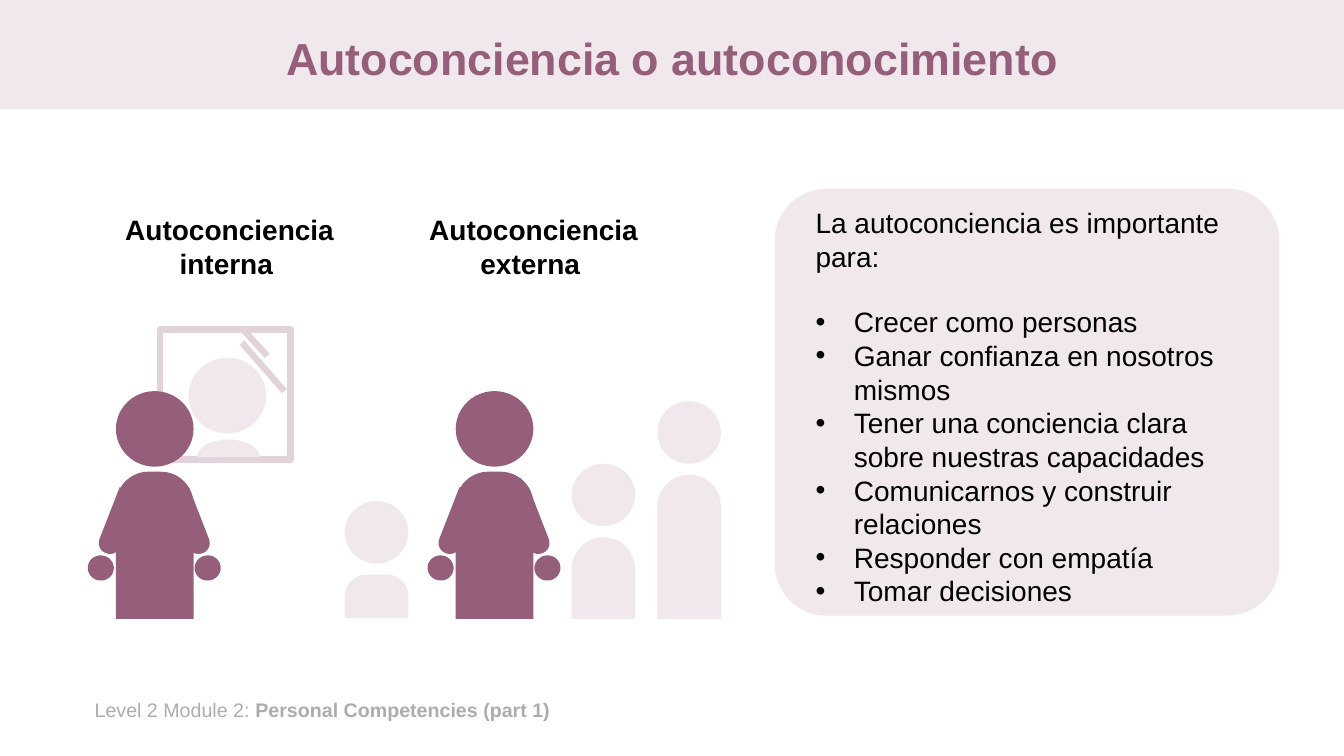
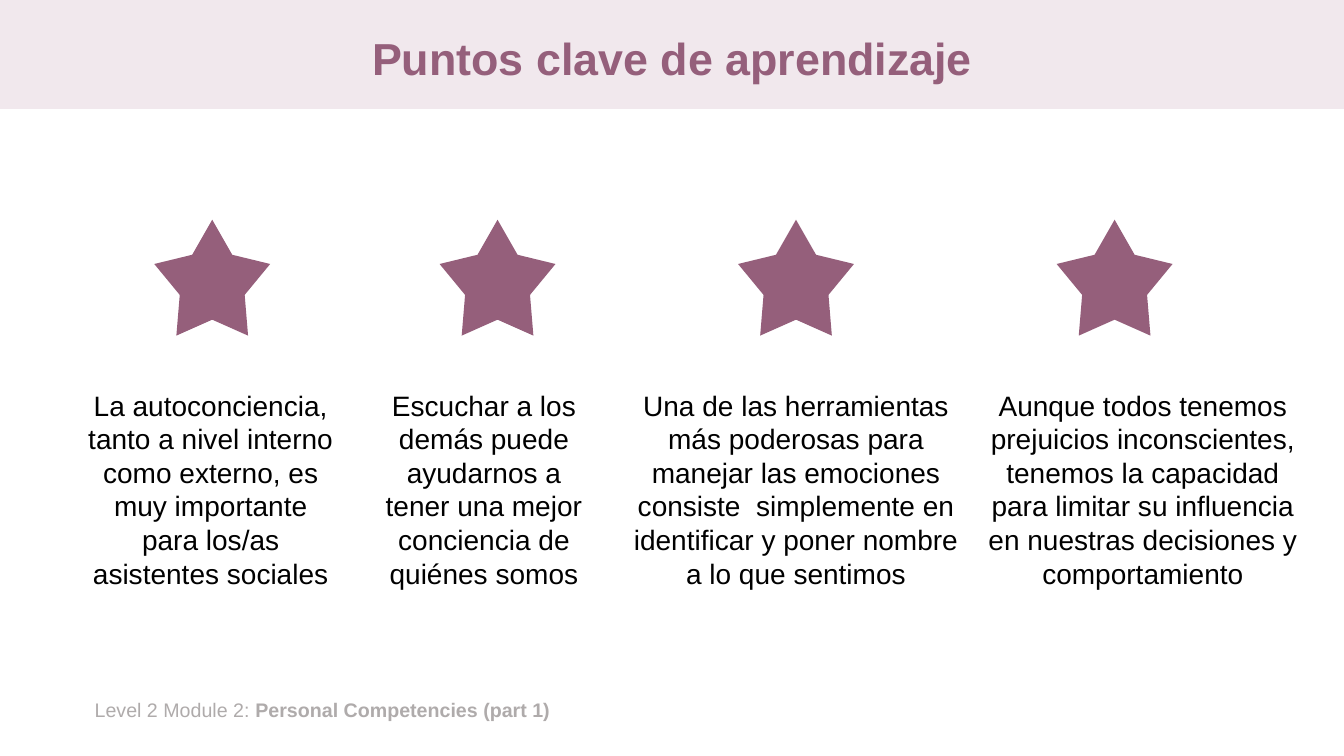
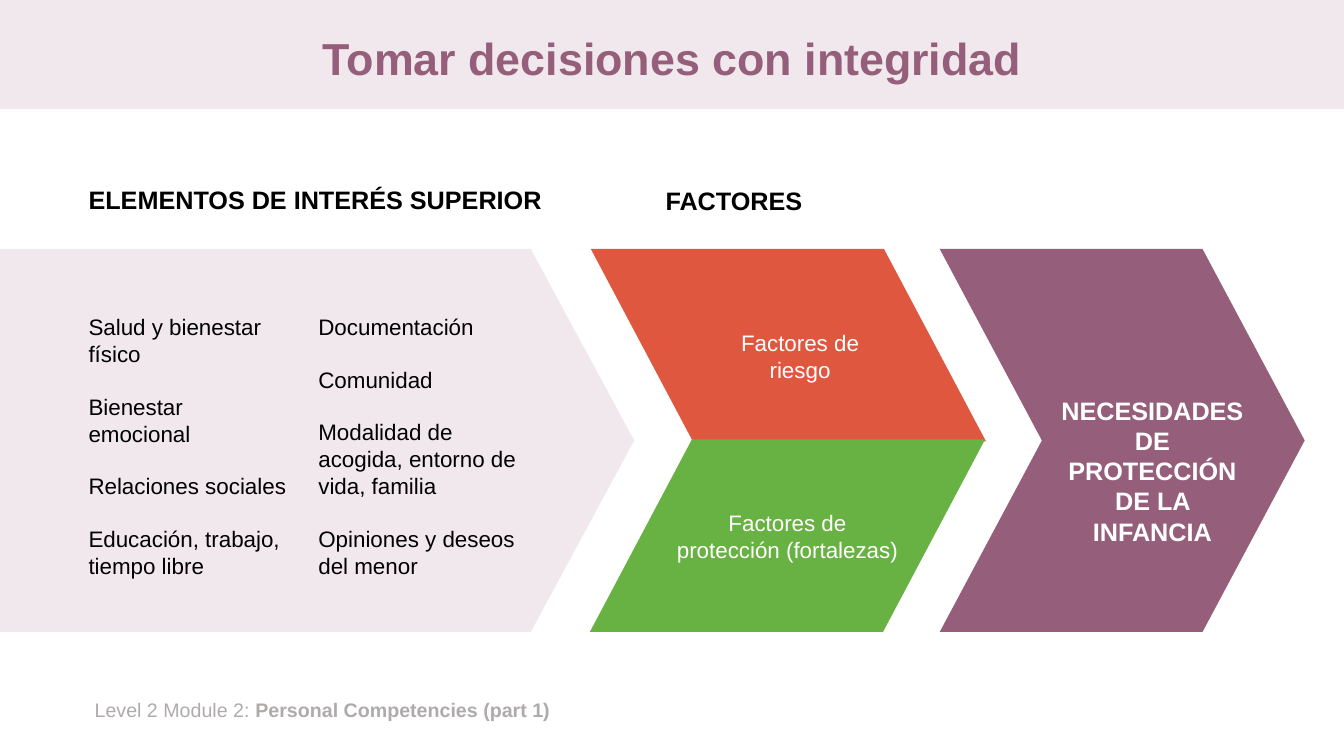
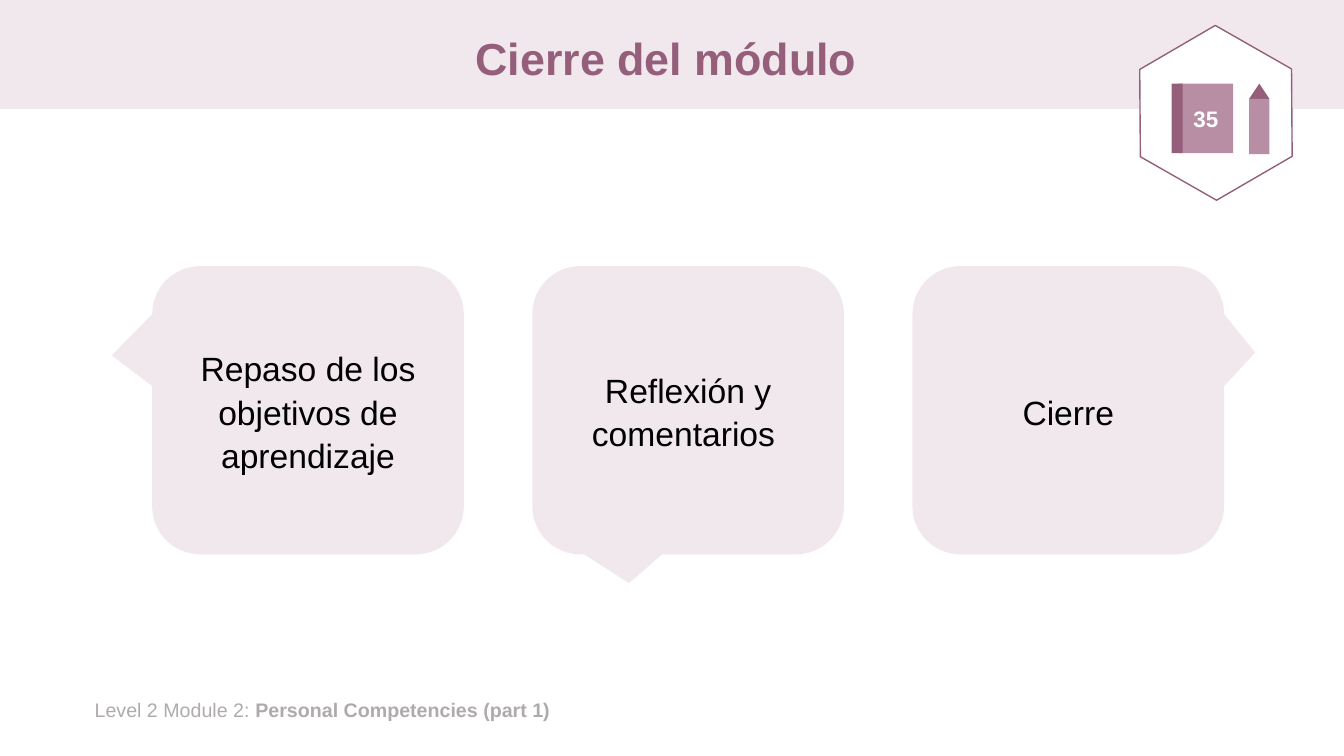
from dataclasses import dataclass

from lxml.etree import SubElement
from pptx import Presentation
from pptx.dml.color import RGBColor
from pptx.enum.shapes import MSO_CONNECTOR, MSO_SHAPE as Preset
from pptx.enum.text import MSO_ANCHOR as Anchor, PP_ALIGN as Align
from pptx.oxml.ns import qn
from pptx.util import Inches, Pt


@dataclass(frozen=True)
class Theme:
    """Colours, font and type sizes of the presentation."""

    plum: str = "955F7B"
    mauve: str = "B78EA3"
    blush: str = "F1E8ED"
    frame: str = "E2D2DA"
    red: str = "E05740"
    green: str = "68B143"
    grey: str = "AFABAB"
    black: str = "000000"
    white: str = "FFFFFF"
    font: str = "Arial"
    title: int = 32
    callout: int = 24
    body: int = 20
    heading: int = 18
    label: int = 16
    footer: int = 14


THEME = Theme()


@dataclass(frozen=True)
class Box:
    """A rectangle in inches."""

    left: float
    top: float
    width: float
    height: float

    def inner(self, left, top, width, height):
        """Return a box placed relative to this one."""
        return Box(self.left + left, self.top + top, width, height)

    def lengths(self):
        """Return position and size as slide lengths."""
        return [Inches(value) for value in (self.left, self.top, self.width, self.height)]


@dataclass(frozen=True)
class TextStyle:
    """Look of a block of text."""

    size: int
    color: str = THEME.black
    bold: bool = False
    align: Align = Align.LEFT
    line_spacing: float = 1.0
    space_after: float = 0


BODY = TextStyle(THEME.body)
BODY_CENTERED = TextStyle(THEME.body, align=Align.CENTER)
SUBTITLE = TextStyle(THEME.body, bold=True, align=Align.CENTER)
TITLE = TextStyle(THEME.title, THEME.plum, True, Align.CENTER, 0.9)
FOOTER = TextStyle(THEME.footer, THEME.grey)
HEADING = TextStyle(THEME.heading, bold=True)
HEADING_CENTERED = TextStyle(THEME.heading, bold=True, align=Align.CENTER)
NEEDS = TextStyle(THEME.heading, THEME.white, True, Align.CENTER)
ELEMENTS = TextStyle(THEME.label, space_after=18.4)
FACTOR = TextStyle(THEME.label, THEME.white, align=Align.CENTER)
NUMBER = TextStyle(THEME.label, THEME.white, True, Align.CENTER)
CALLOUT = TextStyle(THEME.callout, align=Align.CENTER, line_spacing=1.07, space_after=8)


def rgb(color):
    """Return a colour object for a hexadecimal value."""
    return RGBColor.from_string(color)


def add_run(paragraph, text, style, bold=None):
    """Add one run in the given style."""
    run = paragraph.add_run()
    run.text = text
    run.font.name = THEME.font
    run.font.size = Pt(style.size)
    run.font.bold = style.bold if bold is None else bold
    run.font.color.rgb = rgb(style.color)


def write_paragraphs(frame, texts, style):
    """Fill a text frame with one paragraph per text."""
    frame.word_wrap = True
    paragraphs = []
    for index, text in enumerate(texts):
        paragraph = frame.add_paragraph() if index else frame.paragraphs[0]
        paragraph.alignment = style.align
        paragraph.line_spacing = style.line_spacing
        paragraph.space_after = Pt(style.space_after)
        if text:
            add_run(paragraph, text, style)
        paragraphs.append(paragraph)
    return paragraphs


def add_text(slide, box, texts, style, anchor=Anchor.TOP):
    """Add a text box and return its paragraphs."""
    frame = slide.shapes.add_textbox(*box.lengths()).text_frame
    frame.vertical_anchor = anchor
    return write_paragraphs(frame, texts, style)


def add_bullet(paragraph, indent):
    """Give a paragraph a round bullet with a hanging indent."""
    properties = paragraph._p.get_or_add_pPr()
    properties.set("marL", str(Inches(indent)))
    properties.set("indent", str(-Inches(indent)))
    SubElement(properties, qn("a:buFont")).set("typeface", THEME.font)
    SubElement(properties, qn("a:buChar")).set("char", "•")


def add_shape(shapes, kind, box, fill=None, line=None, weight=1, adjustments=(), rotation=0):
    """Add a flat preset shape."""
    shape = shapes.add_shape(kind, *box.lengths())
    shape.shadow.inherit = False
    shape.rotation = rotation
    for index, value in enumerate(adjustments):
        shape.adjustments[index] = value
    if fill:
        shape.fill.solid()
        shape.fill.fore_color.rgb = rgb(fill)
    else:
        shape.fill.background()
    if line:
        shape.line.color.rgb = rgb(line)
        shape.line.width = Pt(weight)
    else:
        shape.line.fill.background()
    return shape


def label_shape(shape, text, style):
    """Write centred text inside a shape."""
    shape.text_frame.vertical_anchor = Anchor.MIDDLE
    write_paragraphs(shape.text_frame, [text], style)


def add_line(slide, start, end, color, weight):
    """Add a straight line between two points."""
    points = [Inches(value) for value in (*start, *end)]
    line = slide.shapes.add_connector(MSO_CONNECTOR.STRAIGHT, *points)
    line.line.color.rgb = rgb(color)
    line.line.width = Pt(weight)
    SubElement(line._element.spPr, qn("a:effectLst"))


def new_slide(presentation, title):
    """Add a slide with the shared band, title and footer."""
    slide = presentation.slides.add_slide(presentation.slide_layouts[6])
    add_shape(slide.shapes, Preset.RECTANGLE, Box(0, 0, 13.33, 1.08), THEME.blush)
    add_text(slide, Box(0.92, 0.13, 11.5, 0.95), [title], TITLE, Anchor.MIDDLE)
    footer = add_text(slide, Box(0.84, 6.87, 11.35, 0.34), [""], FOOTER)[0]
    add_run(footer, "Level 2 Module 2: ", FOOTER)
    add_run(footer, "Personal Competencies (part 1)", FOOTER, bold=True)
    return slide


def draw_main_person(slide, box):
    """Draw the large figure with arms and hands."""
    shapes = slide.shapes.add_group_shape().shapes
    limbs = [
        (Preset.ROUND_2_SAME_RECTANGLE, (0.28, 0.8, 0.77, 1.46), (0.42, 0), 0),
        (Preset.OVAL, (0.28, 0, 0.77, 0.75), (), 0),
    ]
    for arm_left, hand_left, arm_turn, hand_turn in (
        (0.19, 0, 201.3, 8.5),
        (0.91, 1.06, 158.8, 351.6),
    ):
        limbs.append((Preset.ROUND_2_SAME_RECTANGLE, (arm_left, 0.97, 0.22, 0.66), (0.49, 0), arm_turn))
        limbs.append((Preset.OVAL, (hand_left, 1.63, 0.26, 0.25), (), hand_turn))
    for kind, place, adjustments, rotation in limbs:
        add_shape(shapes, kind, box.inner(*place), THEME.plum, adjustments=adjustments, rotation=rotation)


def draw_bystander(slide, box):
    """Draw a pale figure made of a head and a rounded body."""
    shapes = slide.shapes.add_group_shape().shapes
    body = box.inner(0, 0.73, box.width, box.height - 0.73)
    add_shape(shapes, Preset.ROUND_2_SAME_RECTANGLE, body, THEME.blush, adjustments=(0.5, 0))
    add_shape(shapes, Preset.OVAL, box.inner(0, 0, box.width, 0.62), THEME.blush)


def draw_mirror(slide, box):
    """Draw a framed mirror with a reflection and two glints."""
    add_shape(slide.shapes, Preset.OVAL, box.inner(0.28, 0.28, 0.77, 0.75), THEME.blush)
    add_shape(slide.shapes, Preset.RECTANGLE, box, line=THEME.frame, weight=4.5)
    shoulders = box.inner(0.36, 1.09, 0.63, 0.37)
    add_shape(slide.shapes, Preset.CHORD, shoulders, THEME.blush, adjustments=(108.66, 214.77))
    for glint in (box.inner(0.81, 0.13, 0.42, 0.48), box.inner(0.83, 0.01, 0.23, 0.25)):
        end = (glint.left + glint.width, glint.top + glint.height)
        add_line(slide, (glint.left, glint.top), end, THEME.frame, 4.5)


def draw_importance_panel(slide, box):
    """Draw the rounded panel with its bulleted list."""
    add_shape(slide.shapes, Preset.ROUNDED_RECTANGLE, box, THEME.blush, THEME.blush, adjustments=(0.12,))
    texts = [
        "La autoconciencia es importante para:",
        "Crecer como personas",
        "Ganar confianza en nosotros mismos",
        "Tener una conciencia clara sobre nuestras capacidades",
        "Comunicarnos y construir relaciones",
        "Responder con empatía",
        "Tomar decisiones",
    ]
    intro, *bullets = add_text(slide, box.inner(0.3, 0.11, 4.49, 4.14), texts, BODY)
    intro.space_after = Pt(23)
    for paragraph in bullets:
        add_bullet(paragraph, 0.38)


def build_awareness_slide(presentation):
    """Build the slide on internal and external awareness."""
    slide = new_slide(presentation, "Autoconciencia o autoconocimiento")
    draw_importance_panel(slide, Box(7.69, 1.88, 4.99, 4.22))
    add_text(slide, Box(0.68, 2.06, 3.13, 0.77), [" Autoconciencia interna"], SUBTITLE)
    add_text(slide, Box(4.08, 2.06, 2.36, 0.77), [" Autoconciencia", "externa"], SUBTITLE)
    for left, top, bottom in ((3.42, 4.97, 6.13), (5.67, 4.6, 6.14), (6.52, 3.98, 6.14)):
        draw_bystander(slide, Box(left, top, 0.63, bottom - top))
    draw_mirror(slide, Box(1.59, 3.27, 1.29, 1.29))
    for left in (0.87, 4.24):
        draw_main_person(slide, Box(left, 3.88, 1.32, 2.26))


def draw_key_point(slide, box, star_left, text):
    """Draw a star above a centred statement."""
    star = box.inner(star_left, 0, 1.15, 1.15)
    add_shape(slide.shapes, Preset.STAR_5_POINT, star, THEME.plum, adjustments=(0.28,))
    add_text(slide, box.inner(0, 1.62, box.width, 2.12), [text], BODY_CENTERED)


def build_key_points_slide(presentation):
    """Build the slide with four key learning points."""
    slide = new_slide(presentation, "Puntos clave de aprendizaje")
    points = [
        (0.74, 2.7, 0.79, "La autoconciencia, tanto a nivel interno como externo, "
         "es muy importante para los/as asistentes sociales"),
        (3.59, 2.42, 0.77, "Escuchar a los demás puede ayudarnos a tener una mejor "
         "conciencia de quiénes somos"),
        (6.15, 3.49, 1.17, "Una de las herramientas más poderosas para manejar las emociones "
         "consiste  simplemente en identificar y poner nombre a lo que sentimos"),
        (9.59, 3.49, 0.89, "Aunque todos tenemos prejuicios inconscientes, tenemos la capacidad "
         "para limitar su influencia en nuestras decisiones y comportamiento"),
    ]
    for left, width, star_left, text in points:
        draw_key_point(slide, Box(left, 2.18, width, 3.74), star_left, text)


def draw_elements(slide, box):
    """Draw the pale arrow with two columns of elements."""
    add_shape(slide.shapes, Preset.PENTAGON, box, THEME.blush, adjustments=(0.27,))
    columns = [
        ["Salud y bienestar físico", "Bienestar emocional", "Relaciones sociales",
         "Educación, trabajo, tiempo libre"],
        ["Documentación", "Comunidad", "Modalidad de acogida, entorno de vida, familia",
         "Opiniones y deseos del menor"],
    ]
    for index, texts in enumerate(columns):
        add_text(slide, box.inner(0.78 + 2.28 * index, 0.59, 2.2, 3.06), texts, ELEMENTS)


def draw_factors(slide, box):
    """Draw the risk and protection halves of the middle arrow."""
    half = (box.width, 1.91)
    risk = add_shape(slide.shapes, Preset.PARALLELOGRAM, box.inner(0.01, 0, *half),
                     THEME.red, adjustments=(0.53,))
    risk._element.spPr.xfrm.set("flipV", "1")
    protection = add_shape(slide.shapes, Preset.PARALLELOGRAM, box.inner(0, 1.89, *half),
                           THEME.green, adjustments=(0.53,))
    label_shape(protection, "Factores de protección (fortalezas)", FACTOR)
    add_text(slide, box.inner(1.13, 0.75, 1.91, 0.64), ["Factores de riesgo"], FACTOR)


def draw_needs(slide, box):
    """Draw the closing chevron with the protection needs."""
    add_shape(slide.shapes, Preset.CHEVRON, box, THEME.plum, adjustments=(0.28,))
    text = "NECESIDADES DE PROTECCIÓN DE LA INFANCIA"
    add_text(slide, box.inner(1.06, 1.4, 2.1, 1.62), [text], NEEDS)


def build_decisions_slide(presentation):
    """Build the slide with the decision flow."""
    slide = new_slide(presentation, "Tomar decisiones con integridad")
    add_text(slide, Box(0.78, 1.78, 4.92, 0.4), ["ELEMENTOS DE INTERÉS SUPERIOR"], HEADING)
    add_text(slide, Box(5.81, 1.79, 2.94, 0.4), ["FACTORES"], HEADING_CENTERED)
    top, height = 2.47, 3.8
    draw_elements(slide, Box(0, top, 6.29, height))
    draw_factors(slide, Box(5.85, top, 3.92, height))
    draw_needs(slide, Box(9.32, top, 3.62, height))


def draw_workbook_badge(slide, box):
    """Draw the hexagon with a numbered workbook and a pencil."""
    shapes = slide.shapes.add_group_shape().shapes
    add_shape(shapes, Preset.HEXAGON, box, THEME.white, THEME.plum, adjustments=(0.29,), rotation=29.7)
    cover = add_shape(shapes, Preset.RECTANGLE, box.inner(0.5, 0.46, 0.54, 0.69), THEME.mauve)
    label_shape(cover, "35", NUMBER)
    add_shape(shapes, Preset.RECTANGLE, box.inner(0.43, 0.46, 0.11, 0.69), THEME.plum)
    add_shape(shapes, Preset.ISOSCELES_TRIANGLE, box.inner(1.2, 0.46, 0.2, 0.15), THEME.plum)
    add_shape(shapes, Preset.RECTANGLE, box.inner(1.2, 0.61, 0.2, 0.55), THEME.mauve)


def draw_callout(slide, box, pointer, text):
    """Draw a speech bubble whose pointer is relative to its centre."""
    bubble = add_shape(slide.shapes, Preset.ROUNDED_RECTANGULAR_CALLOUT, box,
                       THEME.blush, adjustments=pointer)
    label_shape(bubble, text, CALLOUT)


def build_closing_slide(presentation):
    """Build the slide that closes the module."""
    slide = new_slide(presentation, "Cierre del módulo ")
    callouts = [
        ((-0.63, -0.19), "Repaso de los objetivos de aprendizaje"),
        ((-0.19, 0.6), "Reflexión y comentarios "),
        ((0.6, -0.2), "Cierre"),
    ]
    for index, (pointer, text) in enumerate(callouts):
        draw_callout(slide, Box(1.51 + 3.77 * index, 2.64, 3.09, 2.86), pointer, text)
    draw_workbook_badge(slide, Box(11.19, 0.37, 1.74, 1.5))


def main():
    """Build and save the presentation."""
    presentation = Presentation()
    presentation.slide_width = Inches(13.33)
    presentation.slide_height = Inches(7.5)
    build_awareness_slide(presentation)
    build_key_points_slide(presentation)
    build_decisions_slide(presentation)
    build_closing_slide(presentation)
    presentation.save("out.pptx")


if __name__ == "__main__":
    main()
